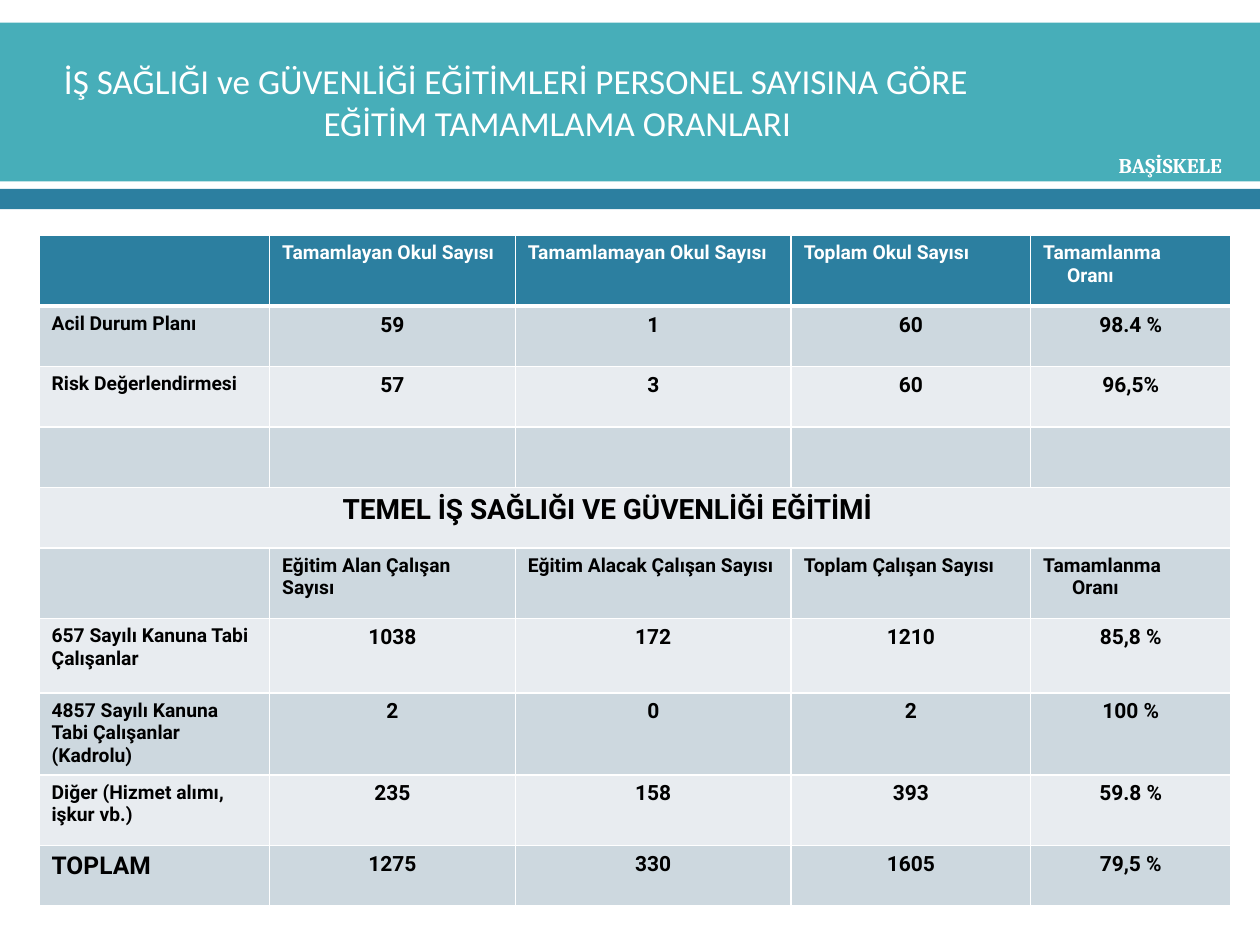
from dataclasses import dataclass

from lxml import etree
from pptx import Presentation
from pptx import util as u
from pptx.dml.color import RGBColor
from pptx.enum import shapes, text
from pptx.oxml.ns import qn


@dataclass(frozen=True)
class Theme:
    teal: str = "47AEB9"
    blue: str = "2C7FA0"
    dark: str = "CDD8DF"
    light: str = "E8ECF0"
    white: str = "FFFFFF"
    black: str = "000000"
    body: str = "Roboto"
    head: str = "Calibri"
    serif: str = "Cambria"
    title: int = 20
    banner: int = 16
    total: int = 14
    value: int = 12
    label: int = 11


def write(frame, lines, *, size, font, color, bold=False, align=None, indents=()):
    """Fill a text frame, one paragraph a line, with optional left indents."""
    for i, line in enumerate(lines.split("\n")):
        para = frame.paragraphs[0] if i == 0 else frame.add_paragraph()
        para.alignment = align
        if i < len(indents):
            props = para._p.get_or_add_pPr()
            props.set("marL", str(u.Inches(indents[i])))
            props.set("indent", "0")
        run = para.add_run()
        run.text = line
        run.font.size = u.Pt(size)
        run.font.name = font
        run.font.bold = bold
        run.font.color.rgb = RGBColor.from_string(color)


class Deck:
    def __init__(self, theme):
        self.theme = theme
        self.prs = Presentation()
        self.prs.slide_width = u.Inches(10)
        self.prs.slide_height = u.Inches(7.5)
        self.slide = self.prs.slides.add_slide(self.prs.slide_layouts[6])

    def band(self, top, high, color):
        bar = self.slide.shapes.add_shape(
            shapes.MSO_SHAPE.RECTANGLE, 0, u.Inches(top),
            self.prs.slide_width, u.Inches(high))
        bar.shadow.inherit = False
        bar.fill.solid()
        bar.fill.fore_color.rgb = RGBColor.from_string(color)
        bar.line.fill.background()

    def label(self, lines, at, wrap=True, anchor=text.MSO_ANCHOR.TOP, **style):
        box = self.slide.shapes.add_textbox(*map(u.Inches, at))
        frame = box.text_frame
        frame.word_wrap = wrap
        frame.vertical_anchor = anchor
        write(frame, lines, color=self.theme.white, **style)

    def grid(self, at, cols, rows):
        frame = self.slide.shapes.add_table(
            len(rows), len(cols), *map(u.Inches, at))
        table = frame.table
        for col, wide in zip(table.columns, cols):
            col.width = u.Inches(wide)
        for row, high in zip(table.rows, rows):
            row.height = u.Inches(high)
        return table

    def paint(self, cell, color, top=1, bottom=1):
        cell.fill.solid()
        cell.fill.fore_color.rgb = RGBColor.from_string(color)
        props = cell._tc.get_or_add_tcPr()
        sides = {"L": 1, "R": 1, "T": top, "B": bottom}
        for i, (side, wide) in enumerate(sides.items()):
            line = etree.Element(qn(f"a:ln{side}"), w=str(u.Pt(wide)))
            fill = etree.SubElement(line, qn("a:solidFill"))
            etree.SubElement(fill, qn("a:srgbClr"), val=self.theme.white)
            props.insert(i, line)


COLS = [1.83, 1.95, 2.19, 1.9, 1.59]
HIGHS = [0.56, 0.48, 0.48, 0.48, 0.48, 0.56, 0.59, 0.56, 0.56, 0.48]
HEAD, BANNER, SUB = 0, 4, 5
ROWS = [
    ["", "Tamamlayan Okul Sayısı", "Tamamlamayan Okul Sayısı",
     "Toplam Okul Sayısı", "Tamamlanma\nOranı"],
    ["Acil Durum Planı", "59", "1", "60", "98.4 %"],
    ["Risk Değerlendirmesi", "57", "3", "60", "96,5%"],
    [""] * 5,
    ["TEMEL İŞ SAĞLIĞI VE GÜVENLİĞİ EĞİTİMİ"] + [""] * 4,
    ["", "Eğitim Alan Çalışan Sayısı", "Eğitim Alacak Çalışan Sayısı",
     "Toplam Çalışan Sayısı", "Tamamlanma\nOranı"],
    ["657 Sayılı Kanuna Tabi Çalışanlar", "1038", "172", "1210", "85,8 %"],
    ["4857 Sayılı Kanuna Tabi Çalışanlar (Kadrolu)", "2", "0", "2", "100 %"],
    ["Diğer (Hizmet alımı, işkur vb.)", "235", "158", "393", "59.8 %"],
    ["TOPLAM", "1275", "330", "1605", "79,5 %"],
]


def main():
    th = Theme()
    deck = Deck(th)

    # Header bands and titles
    deck.band(0.18, 1.26, th.teal)
    deck.band(1.5, 0.16, th.blue)
    deck.label("İŞ SAĞLIĞI ve GÜVENLİĞİ EĞİTİMLERİ PERSONEL SAYISINA GÖRE\n"
               "EĞİTİM TAMAMLAMA ORANLARI", (0.16, 0.2, 9.34, 1.21),
               anchor=text.MSO_ANCHOR.MIDDLE, size=th.title, font=th.head,
               indents=(0.25, 2.31))

    # Table of completion rates
    table = deck.grid((0.31, 1.87, 9.46, 5.23), COLS, HIGHS)
    table.cell(BANNER, 0).merge(table.cell(BANNER, len(COLS) - 1))
    for r, row in enumerate(ROWS):
        fill = th.blue if r == HEAD else th.dark if r % 2 else th.light
        for c, words in enumerate(row):
            cell = table.cell(r, c)
            deck.paint(cell, fill, top=3 if r == HEAD + 1 else 1,
                       bottom=3 if r == HEAD else 1)
            if not words:
                continue
            size, align, indents = th.label, None, ()
            if r == BANNER:
                size, indents = th.banner, (2.31,)
            elif r in (HEAD, SUB):
                indents = (0, 0.19 if r == HEAD else 0.23)
            elif c > 0:
                size, align = th.value, text.PP_ALIGN.CENTER
            elif r == len(ROWS) - 1:
                size = th.total
            write(cell.text_frame, words, size=size, font=th.body, bold=True,
                  color=th.white if r == HEAD else th.black,
                  align=align, indents=indents)

    # District name
    deck.label("BAŞİSKELE", (8.78, 1.16, 1.05, 0.3), wrap=False,
               size=th.value, font=th.serif, bold=True)

    deck.prs.save("out.pptx")


if __name__ == "__main__":
    main()
